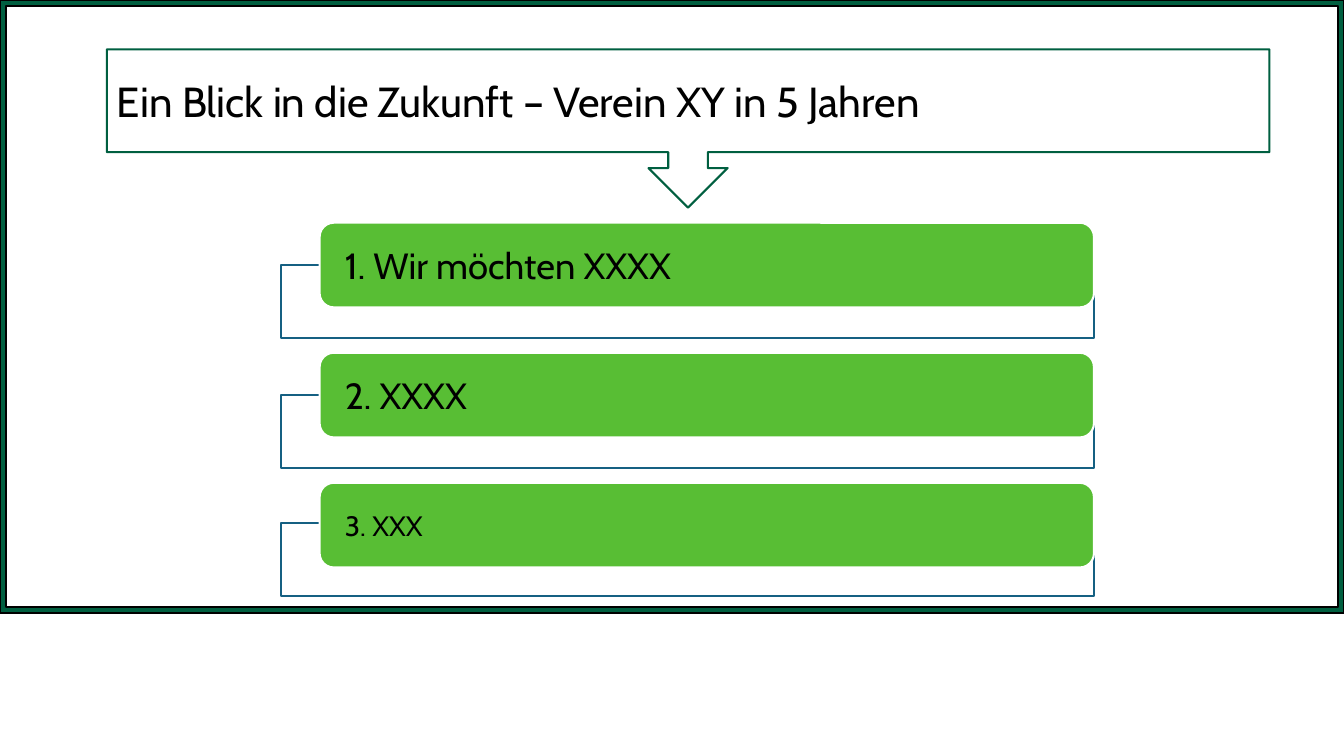
from dataclasses import dataclass

from pptx import Presentation
from pptx.dml.color import RGBColor as Rgb
from pptx.enum.shapes import MSO_SHAPE as Preset
from pptx.enum.text import MSO_ANCHOR as Anchor, MSO_AUTO_SIZE as AutoSize, PP_ALIGN as Align
from pptx.shapes.autoshape import Shape
from pptx.slide import Slide
from pptx.text.text import TextFrame
from pptx.util import Inches, Pt


@dataclass(frozen=True)
class Theme:
    font: str = "Cabin"
    ink: Rgb = Rgb(0x00, 0x00, 0x00)
    paper: Rgb = Rgb(0xFF, 0xFF, 0xFF)
    forest: Rgb = Rgb(0x00, 0x5F, 0x40)
    leaf: Rgb = Rgb(0x58, 0xBE, 0x34)
    bracket: Rgb = Rgb(0x15, 0x60, 0x82)
    title_size: int = 30
    goal_size: int = 26
    small_goal_size: int = 20
    line_width: float = 1.5


@dataclass(frozen=True)
class Box:
    left: float
    top: float
    width: float
    height: float


@dataclass(frozen=True)
class Goal:
    text: str
    size: int
    bracket_top: float


THEME = Theme()
BORDER = Box(0, 0, 13.33, 6.08)
CALLOUT = Box(1.06, 0.49, 11.53, 1.57)
TITLE = Box(1.06, 0.49, 11.53, 1.02)
TITLE_TEXT = "Ein Blick in die Zukunft – Verein XY in 5 Jahren"
FIRST_GOAL_TOP = 2.21
GOAL_PITCH = 1.29
GOALS = [
    Goal("1. Wir möchten XXXX", THEME.goal_size, 2.63),
    Goal("2. XXXX", THEME.goal_size, 3.92),
    Goal("3. XXX", THEME.small_goal_size, 5.19),
]


def add_outline(slide: Slide, preset: Preset, box: Box, fill: Rgb | None, line: Rgb) -> Shape:
    shape = slide.shapes.add_shape(
        preset, Inches(box.left), Inches(box.top), Inches(box.width), Inches(box.height)
    )
    shape.shadow.inherit = False
    if fill is None:
        shape.fill.background()
    else:
        shape.fill.solid()
        shape.fill.fore_color.rgb = fill
    shape.line.color.rgb = line
    shape.line.width = Pt(THEME.line_width)
    return shape


def write(frame: TextFrame, text: str, size: int) -> None:
    frame.word_wrap = True
    frame.auto_size = AutoSize.NONE
    frame.vertical_anchor = Anchor.MIDDLE
    paragraph = frame.paragraphs[0]
    paragraph.alignment = Align.LEFT
    run = paragraph.add_run()
    run.text = text
    run.font.name = THEME.font
    run.font.size = Pt(size)
    run.font.color.rgb = THEME.ink


def add_title(slide: Slide) -> None:
    title = slide.shapes.title
    title.left, title.top = Inches(TITLE.left), Inches(TITLE.top)
    title.width, title.height = Inches(TITLE.width), Inches(TITLE.height)
    write(title.text_frame, TITLE_TEXT, THEME.title_size)


def add_goal(slide: Slide, goal: Goal, top: float) -> None:
    bracket = Box(2.79, goal.bracket_top, 8.06, 0.72)
    add_outline(slide, Preset.RECTANGLE, bracket, THEME.paper, THEME.bracket)
    pill = add_outline(
        slide, Preset.ROUNDED_RECTANGLE, Box(3.17, top, 7.68, 0.84), THEME.leaf, THEME.paper
    )
    frame = pill.text_frame
    frame.margin_left = frame.margin_right = Inches(0.21)
    frame.margin_top = frame.margin_bottom = 0
    write(frame, goal.text, goal.size)


def main() -> None:
    deck = Presentation()
    deck.slide_width, deck.slide_height = Inches(13.33), Inches(7.5)
    slide = deck.slides.add_slide(deck.slide_layouts.get_by_name("Title Only"))
    border = add_outline(slide, Preset.FRAME, BORDER, THEME.forest, THEME.ink)
    border.adjustments[0] = 0.01
    add_outline(slide, Preset.DOWN_ARROW_CALLOUT, CALLOUT, None, THEME.forest)
    add_title(slide)
    for index, goal in enumerate(GOALS):
        add_goal(slide, goal, FIRST_GOAL_TOP + index * GOAL_PITCH)
    deck.save("out.pptx")


if __name__ == "__main__":
    main()
